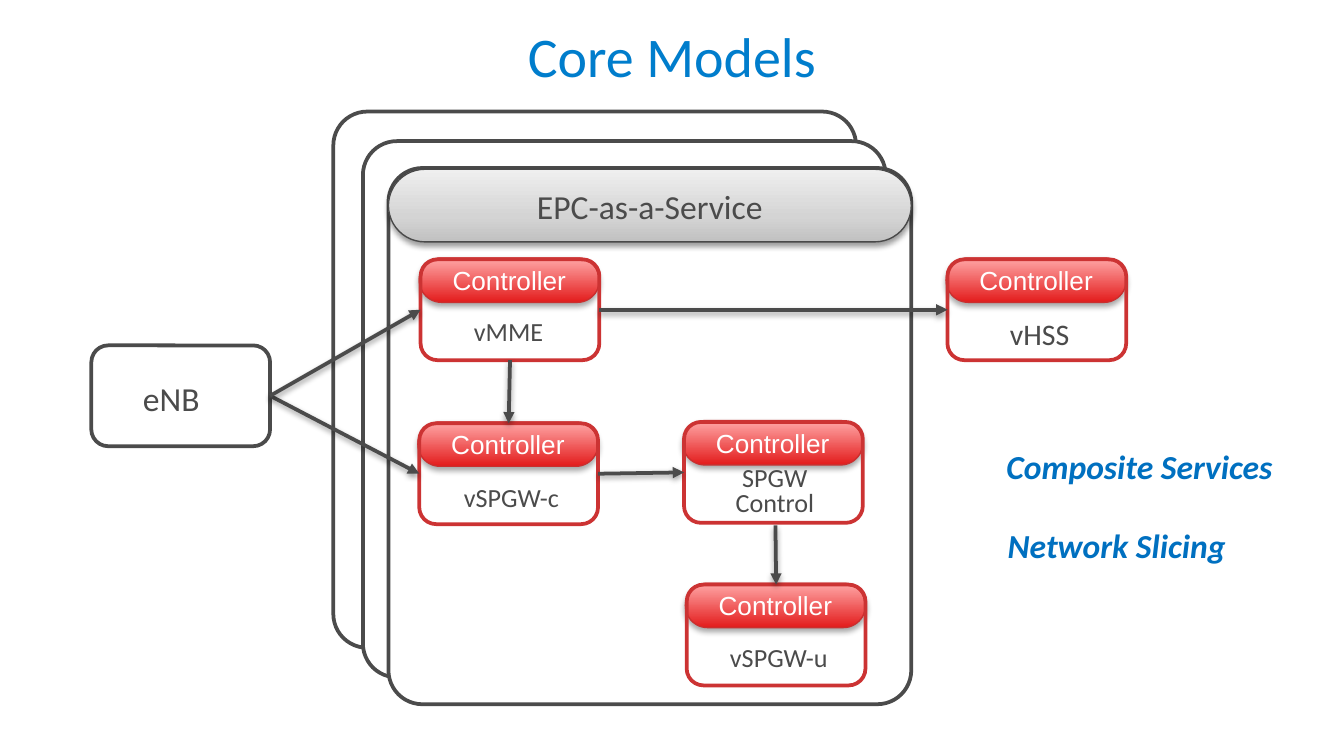
from copy import deepcopy

from pptx import Presentation
from pptx.dml.color import RGBColor
from pptx.enum.shapes import MSO_CONNECTOR, MSO_SHAPE
from pptx.enum.text import MSO_ANCHOR, PP_ALIGN
from pptx.oxml import parse_xml
from pptx.oxml.ns import nsdecls
from pptx.util import Emu, Pt

PX = 9144  # 100 px to the inch
COLORS = {
    "title": "007DCC", "note": "0070C0", "ink": "4B4B4B", "white": "FFFFFF",
    "card": "CC3333", "bar_line": "CB2E2E", "red": "E31C1C", "pink": "FFA7A7",
    "header_line": "494949", "gray": "C1C1C1", "mid_gray": "D4D4D4", "pale": "EFEFEF",
}
COLORS = {name: RGBColor.from_string(value) for name, value in COLORS.items()}

prs = Presentation()
prs.slide_width = Emu(1000 * PX)
prs.slide_height = Emu(prs.slide_width * 9 // 16)
slide = prs.slides.add_slide(prs.slide_layouts[6])


def add_box(bounds, line, fill=None, radius=None, width=2):
    """Rounded box; a fill of two colours runs from bottom to top."""
    box = slide.shapes.add_shape(MSO_SHAPE.ROUNDED_RECTANGLE, *[Emu(v * PX) for v in bounds])
    box.shadow.inherit = False
    if radius is not None:
        box.adjustments[0] = radius
    box.line.color.rgb = COLORS[line]
    box.line.width = Pt(width)
    if isinstance(fill, tuple):
        box.fill.gradient()
        box.fill.gradient_angle = 90
        for stop, color in zip(box.fill.gradient_stops, fill):
            stop.color.rgb = COLORS[color]
    elif fill:
        box.fill.solid()
        box.fill.fore_color.rgb = COLORS[fill]
    else:
        box.fill.background()
    return box


def add_text(text, size, color, bounds=None, host=None, font="Calibri",
             align=PP_ALIGN.CENTER, wrap=True):
    """Text in a host shape, or in a new text box at the bounds."""
    host = host or slide.shapes.add_textbox(*[Emu(v * PX) for v in bounds])
    frame = host.text_frame
    frame.text = text
    frame.word_wrap = wrap
    for paragraph in frame.paragraphs:
        paragraph.alignment = align
        for run in paragraph.runs:
            run.font.name = font
            run.font.size = Pt(size)
            run.font.color.rgb = COLORS[color]
    return frame


# Title
title = add_text("Core Models", 30, "title", (50, 8, 900, 68))
title.vertical_anchor = MSO_ANCHOR.BOTTOM
title.margin_top = title.margin_bottom = Emu(10 * PX)
title.paragraphs[0].line_spacing = Pt(34)

# Stacked service frames, back to front
for left, top, fill in [(248, 83, None), (270, 105, "white"), (289, 125, "white")]:
    add_box((left, top, 389, 399), "ink", fill, radius=0.065)

# Base station
nodes = {"eNB": add_box((68, 257, 133, 75), "ink", "white")}
add_text("eNB", 18, "ink", (91, 276, 73, 29), wrap=False)

# Controller cards: name, position, label offset and size, text size
cards = [
    ("vHSS", 705, 193, (19, 37, 99, 37), 16),
    ("SPGW\nControl", 509, 314, (28, 29, 79, 48), 14),
    ("vMME", 313, 193, (29, 37, 73, 34), 14),
    ("vSPGW-c", 312, 315, (19, 38, 99, 34), 14),
    ("vSPGW-u", 511, 435, (19, 37, 99, 34), 14),
]
raised = []
for name, left, top, (dx, dy, width, height), size in cards:
    bar = add_box((left - 1, top - 1, 134, 33), "bar_line", ("red", "pink"), 0.5, 0.75)
    add_text("Controller", 14, "white", host=bar, font="Arial")
    bar.text_frame.vertical_anchor = MSO_ANCHOR.MIDDLE
    raised.append((bar, 23000, 35))
    label = add_text(name, size, "ink", (left + dx, top + dy, width, height), wrap=False)
    if len(label.paragraphs) > 1:
        for paragraph in label.paragraphs:
            paragraph.line_spacing = 0.8
    nodes[name] = add_box((left, top, 133, 75), "card")

# Arrows between nodes (sides: 0 top, 1 left, 2 bottom, 3 right);
# the one without a source node starts just below the SPGW Control card
for source, out_side, target, in_side in [
    ("vMME", 2, "vSPGW-c", 0),
    ("vSPGW-c", 3, "SPGW\nControl", 1),
    (None, None, "vSPGW-u", 0),
    ("vMME", 3, "vHSS", 1),
    ("eNB", 3, "vSPGW-c", 1),
    ("eNB", 3, "vMME", 1),
]:
    arrow = slide.shapes.add_connector(
        MSO_CONNECTOR.STRAIGHT, *[Emu(v * PX) for v in (577, 391, 577, 433)])
    if source:
        arrow.begin_connect(nodes[source], out_side)
    arrow.end_connect(nodes[target], in_side)
    arrow.line.color.rgb = COLORS["ink"]
    arrow.line.width = Pt(2)
    arrow.line._get_or_add_ln().append(
        parse_xml(f'<a:tailEnd {nsdecls("a")} type="triangle"/>'))
    raised.append((arrow, 20000, 38))

# Side notes
for note, left, top, width in [("Composite Services", 739, 327, 221),
                               ("Network Slicing", 740, 386, 210)]:
    frame = add_text(note, 18, "note", (left, top, width, 40), align=PP_ALIGN.LEFT)
    font = frame.paragraphs[0].runs[0].font
    font.bold = font.italic = True

# Service header with a third gradient stop
header = add_box((289, 126, 389, 54), "header_line", ("gray", "pale"), 0.5, 0.75)
stops = header._element.spPr.find(".//{*}gsLst")
middle = deepcopy(stops[0])
middle.set("pos", "35000")
stops.insert(1, middle)
header.fill.gradient_stops[1].color.rgb = COLORS["mid_gray"]
add_text("EPC-as-a-Service", 18, "ink", host=header)
header.text_frame.vertical_anchor = MSO_ANCHOR.MIDDLE
raised.append((header, 20000, 38))

# Soft shadows below bars, arrows and header
for shape, distance, opacity in raised:
    shape._element.spPr.get_or_add_effectLst().append(parse_xml(
        f'<a:outerShdw {nsdecls("a")} blurRad="40000" dist="{distance}" dir="5400000" '
        f'rotWithShape="0"><a:srgbClr val="000000"><a:alpha val="{opacity * 1000}"/>'
        '</a:srgbClr></a:outerShdw>'))

prs.save("out.pptx")
